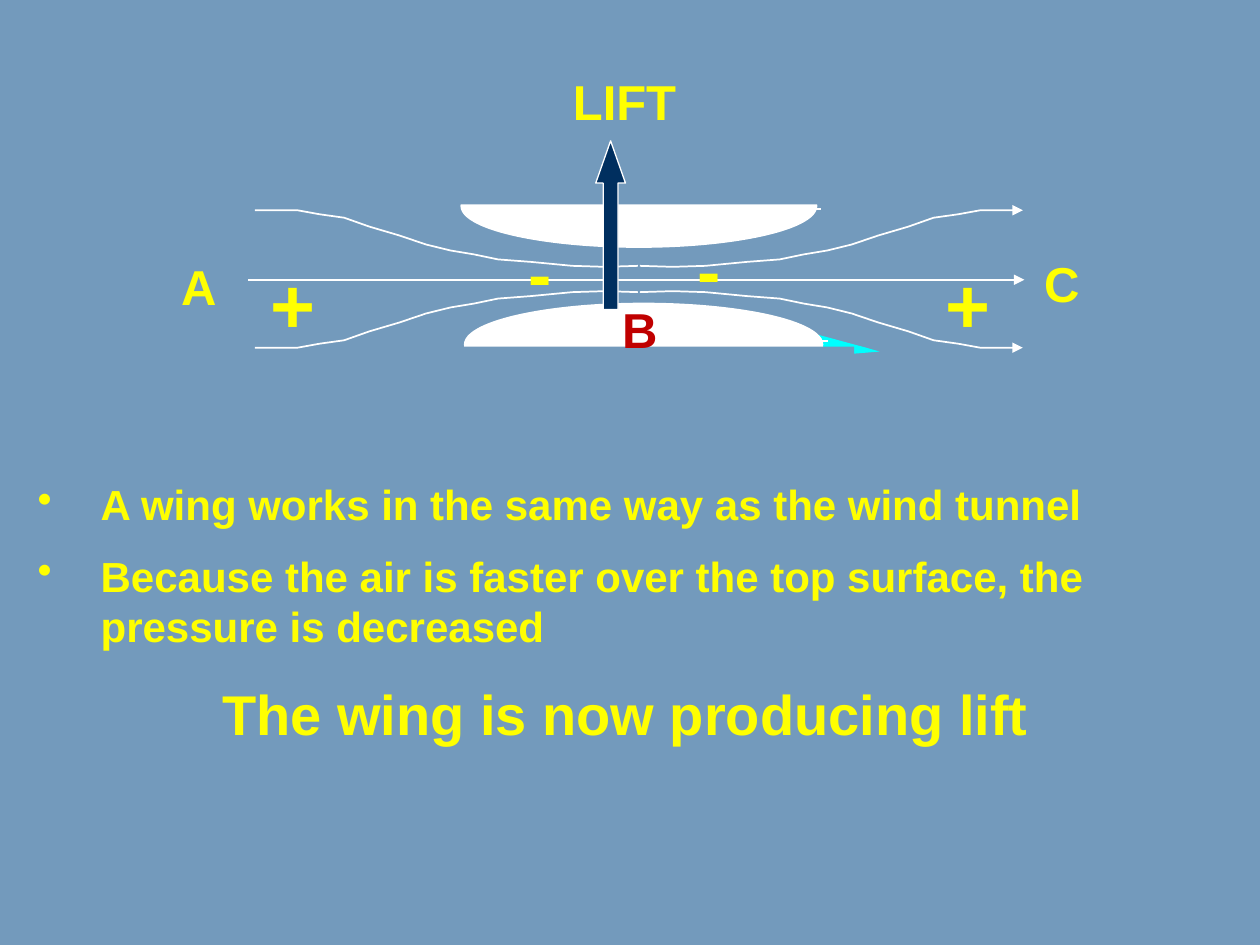
from math import cos, radians, sin

from lxml.etree import SubElement
from pptx import Presentation
from pptx.dml.color import RGBColor
from pptx.enum.shapes import MSO_CONNECTOR, MSO_SHAPE
from pptx.enum.text import MSO_AUTO_SIZE, PP_ALIGN
from pptx.oxml.ns import qn
from pptx.util import Cm, Pt

BACKGROUND, WHITE, YELLOW = "739ABC", "FFFFFF", "FFFF00"
RED, NAVY, CYAN = "C00000", "002F5F", "00FFFF"

AIRFOIL_CENTRE = (13.53, 6.85)
AIRFOIL_ANGLE = 349.6
# Airfoil outline as it appears on the slide, in cm
AIRFOIL = [
    (9.42, 7.01), (9.83, 6.68), (10.34, 6.45), (10.92, 6.3), (11.56, 6.2),
    (12.24, 6.17), (12.93, 6.2), (13.64, 6.25), (14.33, 6.32), (15.01, 6.43),
    (15.65, 6.55), (16.21, 6.68), (16.71, 6.81), (17.15, 6.93), (17.45, 7.01),
    (17.73, 7.09), (17.5, 7.11), (16.89, 7.16), (16, 7.21), (14.91, 7.29),
    (13.72, 7.37), (12.52, 7.39), (11.4, 7.42), (10.44, 7.39), (9.75, 7.32),
    (9.4, 7.11),
]
# Distance inwards from the outer end, distance towards the centre line
STREAMLINE = [
    (0, 0), (0.86, 0), (1.3, 0.08), (1.8, 0.15), (2.31, 0.33), (2.92, 0.51),
    (3.45, 0.69), (3.94, 0.81), (4.42, 0.89), (4.9, 0.99), (5.56, 1.04),
    (6.4, 1.12), (7.06, 1.14), (7.72, 1.12),
]


def colour(hex_string):
    return RGBColor.from_string(hex_string)


def rotate(points, centre, degrees):
    cosine, sine = cos(radians(degrees)), sin(radians(degrees))
    centre_x, centre_y = centre
    return [
        (centre_x + (x - centre_x) * cosine - (y - centre_y) * sine,
         centre_y + (x - centre_x) * sine + (y - centre_y) * cosine)
        for x, y in points
    ]


class SlideBuilder:
    font_name = "Arial"

    def __init__(self, slide):
        self.slide = slide
        slide.background.fill.solid()
        slide.background.fill.fore_color.rgb = colour(BACKGROUND)

    def paint(self, shape, fill=None, line=None, line_width=1):
        shape.shadow.inherit = False
        if fill:
            shape.fill.solid()
            shape.fill.fore_color.rgb = colour(fill)
        else:
            shape.fill.background()
        if line:
            self.stroke(shape, line, line_width)
        else:
            shape.line.fill.background()

    def stroke(self, shape, line, width=1):
        shape.line.color.rgb = colour(line)
        shape.line.width = Pt(width)

    def arrowhead(self, shape, end):
        """Put a triangle at the start (headEnd) or finish (tailEnd) of a line."""
        outline = shape._element.spPr.find(qn("a:ln"))
        SubElement(outline, qn(f"a:{end}"), type="triangle")

    def preset(self, kind, left, top, width, height, fill, line=None, line_width=1):
        shape = self.slide.shapes.add_shape(
            kind, Cm(left), Cm(top), Cm(width), Cm(height))
        self.paint(shape, fill, line, line_width)
        return shape

    def freeform(self, points, fill=None, line=None):
        """Draw an outline, closed when it is filled."""
        start, *others = [(Cm(x), Cm(y)) for x, y in points]
        builder = self.slide.shapes.build_freeform(*start)
        builder.add_line_segments(others, close=bool(fill))
        shape = builder.convert_to_shape()
        self.paint(shape, fill, line)
        return shape

    def horizontal_line(self, left, right, y):
        line = self.slide.shapes.add_connector(
            MSO_CONNECTOR.STRAIGHT, Cm(left), Cm(y), Cm(right), Cm(y))
        self.stroke(line, WHITE)
        SubElement(line._element.spPr, qn("a:effectLst"))
        return line

    def text_frame(self, left, top, width, height, wrap=True):
        box = self.slide.shapes.add_textbox(
            Cm(left), Cm(top), Cm(width), Cm(height))
        frame = box.text_frame
        frame.word_wrap = wrap
        frame.auto_size = MSO_AUTO_SIZE.SHAPE_TO_FIT_TEXT
        return frame

    def set_text(self, paragraph, text, size, text_colour=YELLOW):
        paragraph.text = text
        font = paragraph.font
        font.name, font.size, font.bold = self.font_name, Pt(size), True
        font.color.rgb = colour(text_colour)

    def label(self, text, left, top, width, height, size, text_colour=YELLOW,
              wrap=True):
        frame = self.text_frame(left, top, width, height, wrap)
        self.set_text(frame.paragraphs[0], text, size, text_colour)

    def conclusions(self, left, top, width, height, bullets, closing):
        """Add bulleted statements followed by a larger centred line."""
        frame = self.text_frame(left, top, width, height)
        for index, text in enumerate(bullets):
            paragraph = frame.add_paragraph() if index else frame.paragraphs[0]
            properties = paragraph._p.get_or_add_pPr()
            properties.set("marL", str(Cm(1.27)))
            properties.set("indent", str(-Cm(1.27)))
            SubElement(properties, qn("a:buChar"), char="•")
            if index:
                paragraph.space_before = Pt(12)
            self.set_text(paragraph, text, 24)
        paragraph = frame.add_paragraph()
        paragraph.alignment = PP_ALIGN.CENTER
        paragraph.space_before = Pt(16)
        self.set_text(paragraph, closing, 32)


def draw_airflow(builder):
    level = rotate(AIRFOIL, AIRFOIL_CENTRE, -AIRFOIL_ANGLE)
    builder.freeform(level, fill=CYAN).rotation = AIRFOIL_ANGLE

    # Each wall is an ellipse with its outer half masked
    builder.preset(MSO_SHAPE.OVAL, 9.37, 6.12, 7.21, 1.65, WHITE, WHITE)
    builder.preset(MSO_SHAPE.RECTANGLE, 8.71, 6.99, 8.51, 1.07, BACKGROUND)
    builder.horizontal_line(9.45, 16.69, 6.88)
    builder.arrowhead(builder.horizontal_line(5, 20.65, 5.64), "tailEnd")
    builder.preset(MSO_SHAPE.OVAL, 9.3, 3.33, 7.16, 1.65, WHITE, WHITE)
    builder.preset(MSO_SHAPE.RECTANGLE, 8.61, 3.05, 8.46, 1.07, BACKGROUND)
    builder.horizontal_line(9.35, 16.56, 4.22)

    for outer_y, towards_centre in ((4.24, 1), (7.01, -1)):
        for outer_x, inwards in ((5.14, 1), (20.62, -1)):
            streamline = builder.freeform(
                [(outer_x + inwards * x, outer_y + towards_centre * y)
                 for x, y in STREAMLINE], line=WHITE)
            if inwards < 0:
                builder.arrowhead(streamline, "headEnd")


def main():
    presentation = Presentation()
    presentation.slide_width, presentation.slide_height = Cm(25.4), Cm(19.05)
    slide = presentation.slides.add_slide(presentation.slide_layouts[6])
    builder = SlideBuilder(slide)
    draw_airflow(builder)

    builder.label("A", 3.4, 5.05, 2.01, 1.45, 28)
    builder.label("B", 12.29, 5.92, 1.8, 1.45, 28, RED)
    builder.label("C", 20.8, 4.98, 1.8, 1.45, 28)
    builder.conclusions(
        0.51, 9.53, 24.21, 5.89,
        ["A wing works in the same way as the wind tunnel",
         "Because the air is faster over the top surface, the pressure is decreased"],
        "The wing is now producing lift")
    builder.label("-", 10.41, 4.5, 1.19, 1.96, 40)
    lift_arrow = builder.preset(
        MSO_SHAPE.UP_ARROW, 12.01, 2.84, 0.6, 3.4, NAVY, WHITE, 0.75)
    lift_arrow.adjustments[0] = 0.5
    lift_arrow.adjustments[1] = 1.42
    builder.label("+", 5.21, 5.05, 1.42, 2.13, 44, wrap=False)
    builder.label("+", 18.82, 5.05, 1.24, 2.11, 44)
    builder.label("-", 13.82, 4.45, 1.19, 1.96, 40)
    builder.label("LIFT", 11.3, 1.32, 3.99, 1.45, 28)

    presentation.save("out.pptx")


if __name__ == "__main__":
    main()
